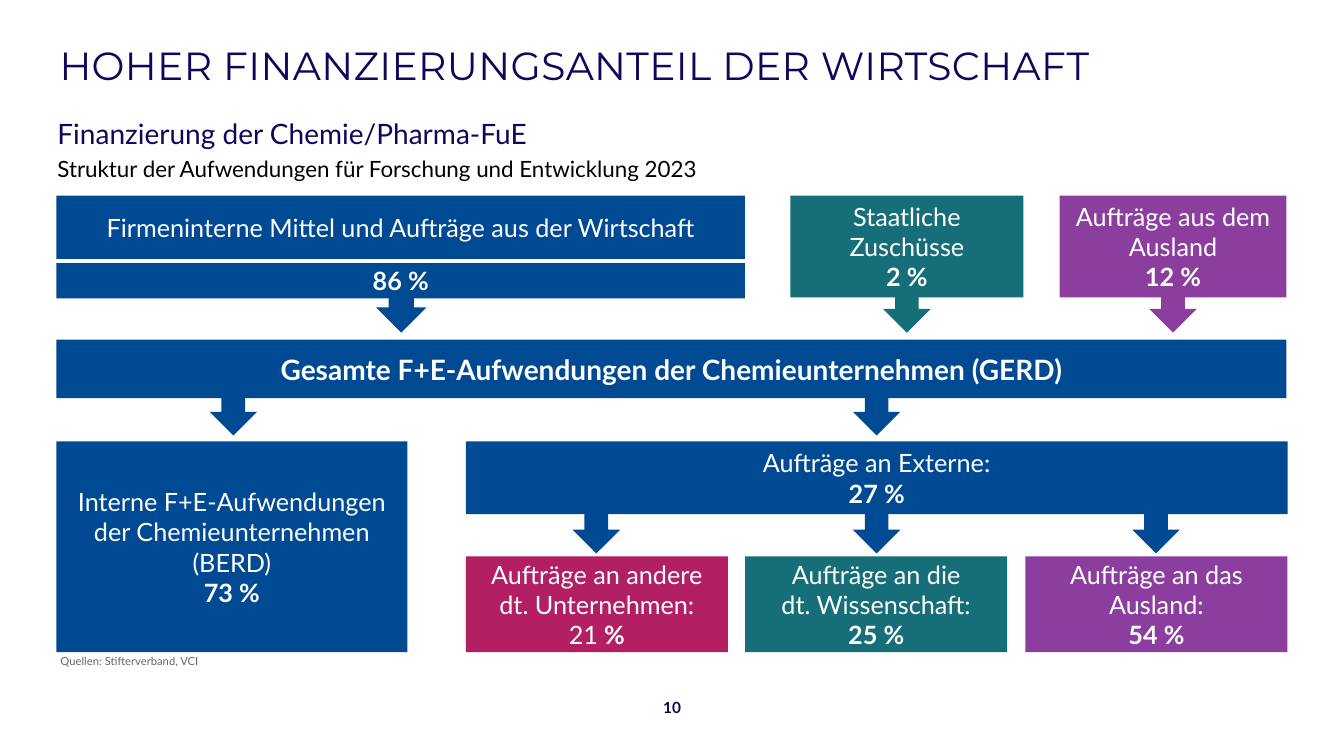
from pptx import Presentation
from pptx.dml.color import RGBColor
from pptx.enum.shapes import MSO_SHAPE as SHAPE
from pptx.enum.text import MSO_ANCHOR as ANCHOR, MSO_AUTO_SIZE as AUTO, PP_ALIGN as ALIGN
from pptx.util import Emu, Pt

PX = 9144  # 100 px to the inch
BLUE, TEAL, PURPLE, MAGENTA = "004A94", "166E79", "8C3E9F", "B22063"
NAVY, WHITE = "10065A", "FFFFFF"


def box(kind, x, y, w, h, fill=None):
    """Add a text box (kind None) or a flat filled shape."""
    at = [Emu(v * PX) for v in (x, y, w, h)]
    if kind is None:
        sp = s.shapes.add_textbox(*at)
        tf = sp.text_frame
        tf.margin_left = tf.margin_right = tf.margin_top = tf.margin_bottom = 0
    else:
        sp = s.shapes.add_shape(kind, *at)
        sp.shadow.inherit = False
        sp.fill.solid()
        sp.fill.fore_color.rgb = RGBColor.from_string(fill)
        sp.line.fill.background()
    sp.text_frame.word_wrap = True
    return sp


def add_run(p, text, size, color, bold=False, font="Lato"):
    r = p.add_run()
    r.text = text
    r.font.name, r.font.size, r.font.bold = font, Pt(size), bold
    r.font.color.rgb = RGBColor.from_string(color)
    return r


prs = Presentation()
prs.slide_width, prs.slide_height = Emu(1333 * PX), Emu(750 * PX)
s = prs.slides.add_slide(prs.slide_layouts[5])

title = s.shapes.title
title.left, title.top, title.width, title.height = [Emu(v * PX) for v in (59, 15, 1220, 98)]
tf = title.text_frame
tf.auto_size, tf.word_wrap, tf.vertical_anchor = AUTO.NONE, True, ANCHOR.MIDDLE
tf.margin_left = tf.margin_right = 0
tf.margin_top = tf.margin_bottom = Emu(4 * PX)
p = tf.paragraphs[0]
p.alignment = ALIGN.LEFT
r = add_run(p, "HOHER FINANZIERUNGSANTEIL DER WIRTSCHAFT", 28, NAVY, font="Montserrat")
r.font._element.set("spc", "30")

# Plain text: x, y, w, h, text, size, colour, line spacing
labels = [
    (57, 116, 1220, 31, "Finanzierung der Chemie/Pharma-FuE", 20, NAVY, Pt(24)),
    (57, 147, 1220, 28, "Struktur der Aufwendungen für Forschung und Entwicklung 2023",
     16, "000000", Pt(24)),
    (60, 649, 622, 15, "Quellen: Stifterverband, VCI", 8, "666666", None),
]
for x, y, w, h, text, size, color, spacing in labels:
    p = box(None, x, y, w, h).text_frame.paragraphs[0]
    p.line_spacing = spacing
    add_run(p, text, size, color)

tf = box(None, 637, 688, 59, 28).text_frame
tf.vertical_anchor = ANCHOR.MIDDLE
tf.paragraphs[0].alignment = ALIGN.CENTER
add_run(tf.paragraphs[0], "10", 11, NAVY, bold=True)

# Arrows lie behind the bars they leave: x, y, w, colour
arrows = [(373, 275, 50, BLUE), (876, 275, 47, TEAL), (1140, 275, 47, PURPLE),
          (208, 377, 47, BLUE), (846, 377, 47, BLUE)]
arrows += [(x, 494, 47, BLUE) for x in (568, 846, 1123)]
for x, y, w, color in arrows:
    box(SHAPE.DOWN_ARROW, x, y, w, 55, color)

# Bars: x, y, w, h, colour, size, lines of (regular text, bold text)
bars = [
    (56, 261, 683, 35, BLUE, 18, [("", "86 %")]),
    (56, 194, 683, 63, BLUE, 18,
     [("Firmeninterne Mittel und Aufträge aus der Wirtschaft", "")]),
    (784, 194, 231, 101, TEAL, 18, [("Staatliche Zuschüsse", ""), ("", "2 %")]),
    (1051, 194, 225, 101, PURPLE, 18, [("Aufträge aus dem Ausland", ""), ("", "12 %")]),
    (56, 337, 1220, 58, BLUE, 20,
     [("", "Gesamte F+E-Aufwendungen der Chemieunternehmen (GERD)")]),
    (56, 438, 348, 209, BLUE, 18,
     [("Interne F+E-Aufwendungen der Chemieunternehmen (BERD)", ""), ("", "73 %")]),
    (462, 438, 815, 72, BLUE, 18, [("Aufträge an Externe:", ""), ("", "27 %")]),
    (462, 552, 260, 95, MAGENTA, 18,
     [("Aufträge an andere", ""), ("dt. Unternehmen:", ""), ("21", " %")]),
    (739, 552, 260, 95, TEAL, 18,
     [("Aufträge an die", ""), ("dt. Wissenschaft:", ""), ("", "25 %")]),
    (1017, 552, 260, 95, PURPLE, 18, [("Aufträge an das Ausland:", ""), ("", "54 %")]),
]
for x, y, w, h, color, size, lines in bars:
    tf = box(SHAPE.RECTANGLE, x, y, w, h, color).text_frame
    tf.vertical_anchor = ANCHOR.MIDDLE
    for i, line in enumerate(lines):
        p = tf.add_paragraph() if i else tf.paragraphs[0]
        p.alignment = ALIGN.CENTER
        for text, bold in zip(line, (False, True)):
            if text:
                add_run(p, text, size, WHITE, bold)

prs.save("out.pptx")
